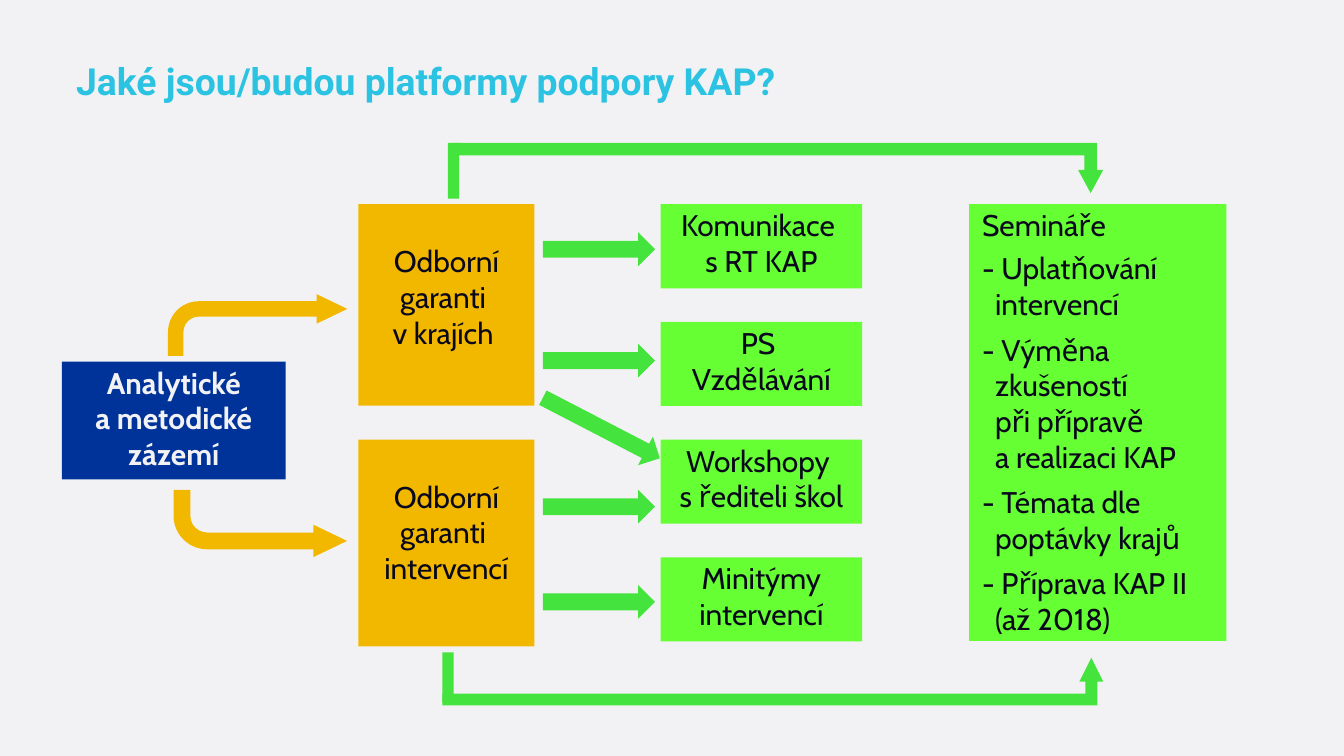
"""Build the slide on the platforms that support KAP."""
import pptx
import pptx.dml.color
import pptx.enum.shapes
import pptx.enum.text
import pptx.util

Cm = pptx.util.Cm
Pt = pptx.util.Pt
RGBColor = pptx.dml.color.RGBColor
SHAPE = pptx.enum.shapes.MSO_SHAPE
ALIGN = pptx.enum.text.PP_ALIGN
ANCHOR = pptx.enum.text.MSO_ANCHOR

PAPER = RGBColor(0xF2, 0xF2, 0xF5)
CYAN = RGBColor(0x2B, 0xC3, 0xE1)
NAVY = RGBColor(0x00, 0x33, 0x99)
AMBER = RGBColor(0xF2, 0xB8, 0x00)
LIME = RGBColor(0x66, 0xFF, 0x33)
GREEN = RGBColor(0x45, 0xE3, 0x3D)
INK = RGBColor(0x0A, 0x09, 0x1B)

deck = pptx.Presentation()
deck.slide_width, deck.slide_height = Cm(50.8), Cm(28.58)
page = deck.slides.add_slide(deck.slide_layouts[5])
page.background.fill.solid()
page.background.fill.fore_color.rgb = PAPER


def add_block(kind, place, color, adjustments=(), flipped=False):
    block = page.shapes.add_shape(kind, *(Cm(length) for length in place))
    block.shadow.inherit = False
    block.fill.solid()
    block.fill.fore_color.rgb = color
    block.line.fill.background()
    for index, value in enumerate(adjustments):
        block.adjustments[index] = value
    if flipped:
        block._element.spPr.xfrm.set("flipV", "1")
    return block


def write(box, lines, align=ALIGN.CENTER, color=INK, bold=False, top=0.1, left=0):
    frame_format = {
        "word_wrap": True,
        "vertical_anchor": ANCHOR.TOP,
        "margin_left": Cm(left),
        "margin_right": 0,
        "margin_top": Cm(top),
        "margin_bottom": Cm(0.03),
    }
    for name, value in frame_format.items():
        setattr(box.text_frame, name, value)
    box.text_frame.text = "\n".join(lines)
    font_format = {"name": "Cabin", "size": Pt(32), "bold": bold}
    for para in box.text_frame.paragraphs:
        para.alignment = align
        for span in para.runs:
            span.font.color.rgb = color
            for name, value in font_format.items():
                setattr(span.font, name, value)


title = page.shapes.title
title_place = {"left": 2.62, "top": 2.24, "width": 45.85, "height": 1.8}
for name, value in title_place.items():
    setattr(title, name, Cm(value))
title.text_frame.text = "Jaké jsou/budou platformy podpory KAP?"
title.text_frame.auto_size = pptx.enum.text.MSO_AUTO_SIZE.NONE
heading = title.text_frame.paragraphs[0]
heading.alignment = ALIGN.LEFT
heading.line_spacing = 0.9
heading_font = heading.runs[0].font
heading_font.color.rgb = CYAN
for name, value in {"name": "Roboto", "size": Pt(40), "bold": True}.items():
    setattr(heading_font, name, value)

background_box = add_block(SHAPE.RECTANGLE, (2.34, 13.67, 8.46, 4.45), NAVY)
write(background_box, ["Analytické", "a metodické zázemí"], color=PAPER, bold=True)

ROW_TOP = 7.72
ROW_STEP = 4.45
guarantors = [
    (ROW_TOP, 7.62, "v krajích "),
    (ROW_TOP + 2 * ROW_STEP, 7.82, "intervencí"),
]
for top, height, field in guarantors:
    box = add_block(SHAPE.RECTANGLE, (13.55, top, 6.65, height), AMBER)
    write(box, ["Odborní garanti ", field], top=1.46)

platforms = [
    ["Komunikace ", "s RT KAP"],
    ["PS ", "Vzdělávání"],
    ["Workshopy ", "s řediteli škol"],
    ["Minitýmy intervencí"],
]
for row, lines in enumerate(platforms):
    top = ROW_TOP + row * ROW_STEP
    write(add_block(SHAPE.RECTANGLE, (24.97, top, 7.62, 3.18), LIME), lines)

seminars = add_block(SHAPE.RECTANGLE, (36.63, ROW_TOP, 9.73, 16.51), LIME)
topics = [
    "Semináře",
    "- Uplatňování\vintervencí",
    "- Výměna\vzkušeností\vpři přípravě\va realizaci KAP",
    "- Témata dle\vpoptávky krajů",
    "- Příprava KAP II\v(až 2018)",
]
write(seminars, topics, align=ALIGN.LEFT, left=0.49)
for para, space in zip(seminars.text_frame.paragraphs[1:], (8, 10, 10, 10)):
    para.space_before = Pt(space)
    properties = para._p.get_or_add_pPr()
    properties.set("marL", str(Cm(0.49)))
    properties.set("indent", str(-Cm(0.49)))

for top in (8.79, 13, 18.52, 22.12):
    add_block(SHAPE.RIGHT_ARROW, (20.52, top, 4.24, 1.27), GREEN)
slanted_arrow = add_block(SHAPE.RIGHT_ARROW, (20.24, 15.57, 4.98, 1.22), GREEN)
slanted_arrow.rotation = 27.4

add_block(SHAPE.BENT_UP_ARROW, (17.15, 5.4, 24.55, 1.9), GREEN, (0.25, 0.25, 0.46), True)
add_block(SHAPE.BENT_UP_ARROW, (16.72, 24.87, 24.98, 1.8), GREEN, (0.25, 0.25, 0.5))
for stem in ((16.93, 5.4, 0.43, 2.11), (16.72, 24.66, 0.43, 1.9)):
    add_block(SHAPE.RECTANGLE, stem, GREEN)

BEND = (0.25, 0.24, 0.5, 0.5)
add_block(SHAPE.BENT_ARROW, (6.35, 11.12, 6.78, 2.33), AMBER, BEND)
add_block(SHAPE.BENT_ARROW, (6.56, 18.52, 6.56, 2.54), AMBER, BEND, True)

deck.save("out.pptx")
